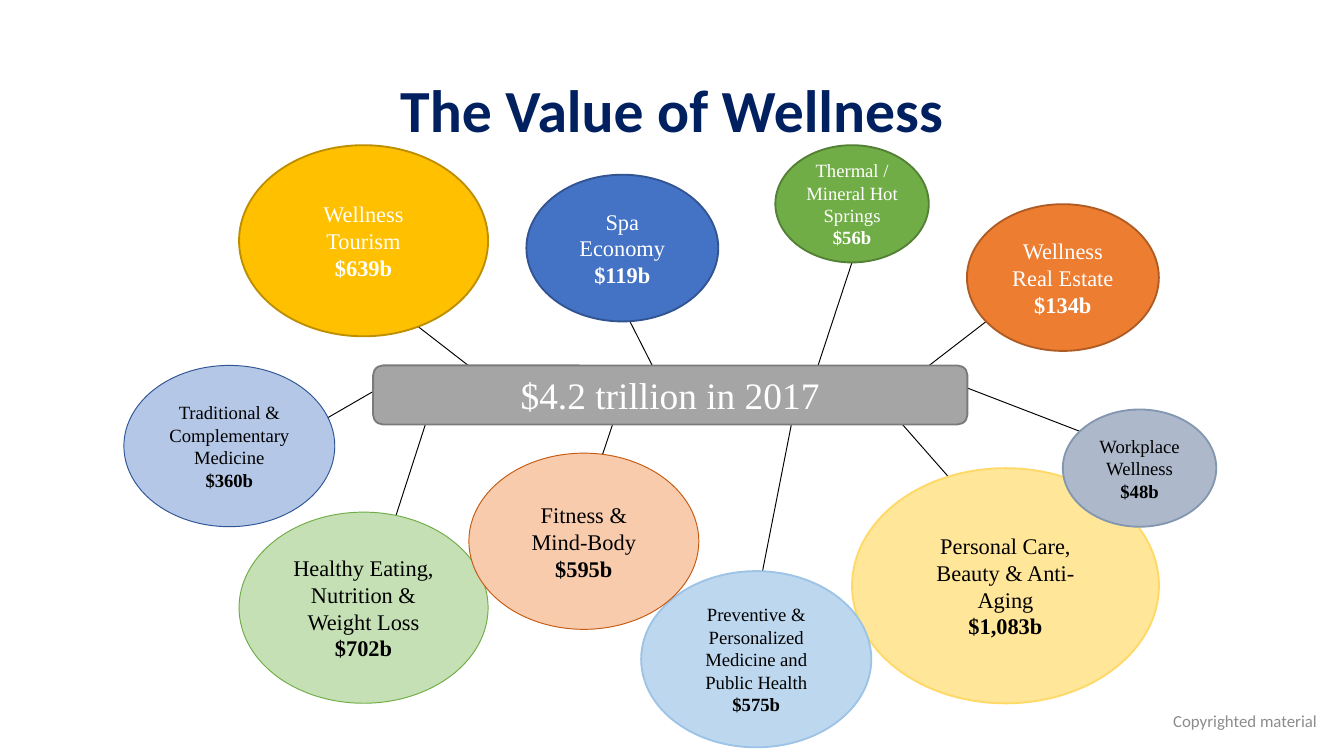
from typing import NamedTuple

from lxml import etree
from pptx import Presentation
from pptx.dml.color import RGBColor
from pptx.enum.shapes import MSO_CONNECTOR, MSO_SHAPE
from pptx.enum.text import MSO_ANCHOR, PP_ALIGN
from pptx.oxml.ns import qn
from pptx.util import Pt

STRAIGHT = MSO_CONNECTOR.STRAIGHT
OVAL = MSO_SHAPE.OVAL
ROUNDED = MSO_SHAPE.ROUNDED_RECTANGLE
MIDDLE = MSO_ANCHOR.MIDDLE
CENTER = PP_ALIGN.CENTER
RIGHT = PP_ALIGN.RIGHT

SERIF = "Times New Roman"
SANS = "Calibri"
COLORS = {
    "white": "FFFFFF", "black": "000000", "navy": "002060", "footer": "8C8C8C",
    "gold": "FFC000", "gold_edge": "BD8E00",
    "blue": "4472C4", "blue_edge": "325491",
    "gray": "A5A5A5", "gray_edge": "7A7A7A",
    "cream": "FFE699", "cream_edge": "FFD966",
    "mint": "C5E0B4", "green": "70AD47", "green_edge": "538035",
    "sky": "BDD7EE", "sky_edge": "9DC3E6",
    "orange": "ED7D31", "orange_edge": "AF5C24",
    "periwinkle": "B4C7E7", "periwinkle_edge": "2F5597",
    "peach": "F8CBAD", "peach_edge": "C55A11",
    "slate": "ADB9CA", "slate_edge": "8497B0",
}


class Box(NamedTuple):
    x: float
    y: float
    w: float
    h: float


class Spoke(NamedTuple):
    x1: float
    y1: float
    x2: float
    y2: float


class Node(NamedTuple):
    box: Box
    label: str
    value: str
    fill: str
    edge: str
    ink: str = "black"
    size: float = 12
    weight: float = 1
    padded: bool = True
    kind: int = OVAL


SPOKES = [
    Spoke(210.2, 282.2, 230.4, 219.6),
    Spoke(312.5, 274.3, 333.4, 211.7),
    Spoke(169.2, 227.5, 210.2, 203.8),
    Spoke(405.4, 321.8, 425.5, 219.6),
    Spoke(517.7, 266.4, 476.6, 219.6),
    Spoke(589.7, 235.4, 507.6, 203.8),
    Spoke(435.6, 203.8, 456.5, 140.4),
    Spoke(487.4, 203.8, 528.5, 172.1),
    Spoke(353.5, 203.8, 333.4, 164.2),
    Spoke(271.4, 211.7, 220.3, 172.1),
]

NODES = [
    Node(Box(128.1, 77.8, 133.4, 102.4), "Wellness Tourism", "$639b",
         "gold", "gold_edge", "white"),
    Node(Box(282, 93.6, 102.8, 78.6), "Spa Economy", "$119b",
         "blue", "blue_edge", "white"),
    Node(Box(199.9, 195.8, 318.4, 31.6), "$4.2 trillion in 2017", "",
         "gray", "gray_edge", "white", size=20, kind=ROUNDED),
    Node(Box(456.5, 250.8, 164.4, 126), "Personal Care, Beauty & Anti-Aging", "$1,083b",
         "cream", "cream_edge"),
    Node(Box(128.1, 274.4, 133.4, 102.4), "Healthy Eating, Nutrition & Weight Loss", "$702b",
         "mint", "green", weight=0.5),
    Node(Box(343.5, 306, 123.3, 94.4),
         "Preventive & Personalized Medicine and Public Health", "$575b",
         "sky", "sky_edge", size=10),
    Node(Box(518, 109.4, 102.8, 78.6), "Wellness Real Estate", "$134b",
         "orange", "orange_edge", "white"),
    Node(Box(66.4, 195.8, 113, 86.4), "Traditional & Complementary Medicine", "$360b",
         "periwinkle", "periwinkle_edge", size=10, weight=0.5, padded=False),
    Node(Box(251.2, 242.8, 123.2, 94.4), "Fitness & Mind-Body", "$595b",
         "peach", "peach_edge", weight=0.5),
    Node(Box(415.4, 77.8, 82.2, 62.8), "Thermal / Mineral Hot Springs", "$56b",
         "green", "green_edge", "white", size=10, padded=False),
    Node(Box(569.4, 219.4, 82.2, 62.8), "Workplace Wellness", "$48b",
         "slate", "slate_edge", size=10, padded=False),
]


def rgb(name: str) -> RGBColor:
    return RGBColor.from_string(COLORS[name])


def points(values: tuple) -> list:
    return [Pt(v) for v in values]


def write(tf, text: str, *, size: float, color: str, font: str = SERIF,
          bold: bool = False, align=CENTER, spacing: float = 1, first: bool = True) -> None:
    tf.word_wrap = True
    tf.vertical_anchor = MIDDLE
    p = tf.paragraphs[0] if first else tf.add_paragraph()
    p.alignment = align
    p.line_spacing = spacing
    r = p.add_run()
    r.text = text
    r.font.name = font
    r.font.size = Pt(size)
    r.font.bold = bold
    r.font.color.rgb = rgb(color)


def draw_spoke(s, spoke: Spoke) -> None:
    line = s.shapes.add_connector(STRAIGHT, *points(spoke))
    line.line.color.rgb = rgb("black")
    line.line.width = Pt(0.5)
    etree.SubElement(line._element.spPr, qn("a:effectLst"))


def draw_node(s, node: Node) -> None:
    sp = s.shapes.add_shape(node.kind, *points(node.box))
    sp.shadow.inherit = False
    sp.fill.solid()
    sp.fill.fore_color.rgb = rgb(node.fill)
    sp.line.color.rgb = rgb(node.edge)
    sp.line.width = Pt(node.weight)
    tf = sp.text_frame
    if not node.padded:
        tf.margin_left = tf.margin_right = tf.margin_top = tf.margin_bottom = 0
    write(tf, node.label, size=node.size, color=node.ink)
    if node.value:
        write(tf, node.value, size=node.size, color=node.ink, bold=True, first=False)


def main() -> None:
    prs = Presentation()
    prs.slide_width, prs.slide_height = Pt(720), Pt(405)
    s = prs.slides.add_slide(prs.slide_layouts[6])

    title = s.shapes.add_textbox(*points(Box(49.5, 21.6, 621, 78.3)))
    write(title.text_frame, "The Value of Wellness", size=32, color="navy",
          font=SANS, bold=True, spacing=0.9)
    footer = s.shapes.add_textbox(*points(Box(546.5, 375.3, 168, 21.6)))
    write(footer.text_frame, "Copyrighted material ", size=9, color="footer",
          font=SANS, align=RIGHT)

    for spoke in SPOKES:
        draw_spoke(s, spoke)
    for node in NODES:
        draw_node(s, node)
    prs.save("out.pptx")


if __name__ == "__main__":
    main()
